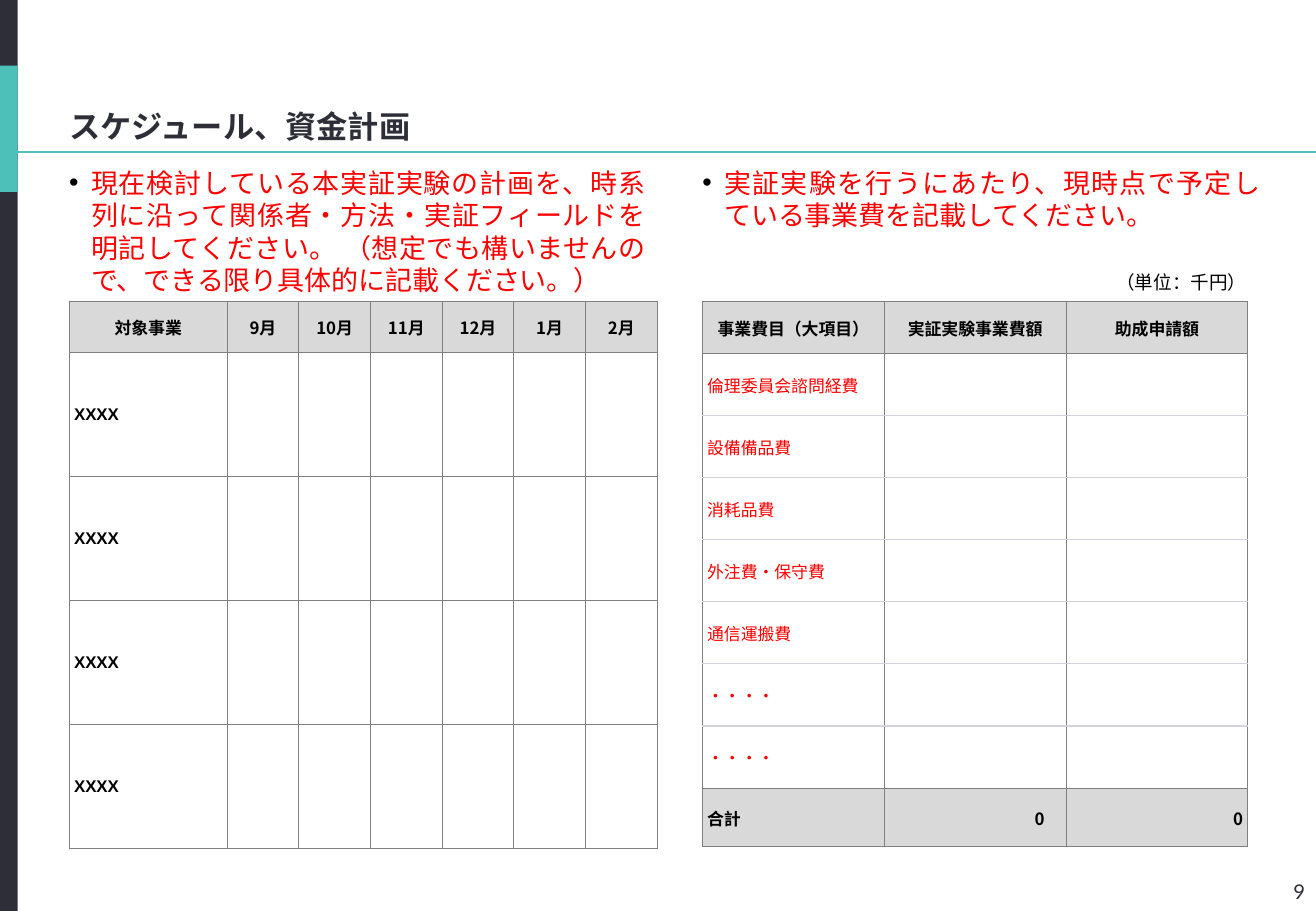
from lxml.etree import SubElement
from pptx import Presentation
from pptx.dml.color import RGBColor
from pptx.enum.shapes import MSO_CONNECTOR, MSO_SHAPE
from pptx.enum.text import MSO_ANCHOR, MSO_AUTO_SIZE, PP_ALIGN
from pptx.oxml.ns import qn
from pptx.util import Inches, Pt

DARK = RGBColor(0x2E, 0x2E, 0x38)
TEAL = RGBColor(0x4E, 0xC0, 0xBA)
RED = RGBColor(0xFF, 0x00, 0x00)
BLACK = RGBColor(0x00, 0x00, 0x00)
GRAY = RGBColor(0x80, 0x80, 0x80)
PALE = RGBColor(0xD2, 0xD2, 0xDA)
SHADE = RGBColor(0xD9, 0xD9, 0xD9)

LATO, ARIAL, NOTO = "Lato", "Arial", "Noto Sans CJK JP"
FIRM, SOFT = (GRAY, 0.5), (PALE, 0.75)
FRAME = dict.fromkeys("LRTB", FIRM)
BARE = dict.fromkeys("LRTB")

HEADING = {"name": NOTO, "size": Pt(10), "bold": True, "color": BLACK}
LABEL = {**HEADING, "name": ARIAL}
ITEM = {**LABEL, "bold": False, "color": RED}
UNIT = {**HEADING, "size": Pt(11), "bold": False}
GUIDE = {"name": NOTO, "size": Pt(16), "bold": False, "color": RED}
TITLE = {"name": LATO, "size": Pt(18.5), "bold": True, "color": DARK}
NUMBER = {"name": LATO, "size": Pt(12), "bold": False, "color": DARK}

# Shares of the slide's width or height, in percent
BAR_WIDTH = 1.35
LEFT, RIGHT = 5.26, 53.37
GUIDE_TOP = 18.27


class PlanSlide:
    def __init__(self, presentation):
        self.width = presentation.slide_width
        self.height = presentation.slide_height
        self.slide = presentation.slides.add_slide(presentation.slide_layouts[3])

    def across(self, share):
        return round(self.width * share / 100)

    def down(self, share):
        return round(self.height * share / 100)

    def box(self, left, top, width, height):
        return self.across(left), self.down(top), self.across(width), self.down(height)

    def bar(self, top, height, color):
        shape = self.slide.shapes.add_shape(
            MSO_SHAPE.RECTANGLE, *self.box(0, top, BAR_WIDTH, height))
        shape.shadow.inherit = False
        shape.fill.solid()
        shape.fill.fore_color.rgb = color
        shape.line.fill.background()

    def rule(self, top):
        y = self.down(top)
        line = self.slide.shapes.add_connector(MSO_CONNECTOR.STRAIGHT, 0, y, self.width, y)
        line.line.color.rgb = TEAL
        line.line.width = Pt(1.5)
        SubElement(line._element.spPr, qn("a:effectLst"))

    def add_words(self, paragraph, text, style, align):
        paragraph.alignment = align
        run = paragraph.add_run()
        run.text = text
        for name, value in style.items():
            if name == "color":
                run.font.color.rgb = value
            else:
                setattr(run.font, name, value)
        SubElement(run.font._element, qn("a:ea"), typeface=NOTO)

    def text(self, shape, place, text, style, align, anchor=MSO_ANCHOR.TOP):
        """Place a text box or placeholder, fill it and return its paragraph."""
        shape.left, shape.top, shape.width, shape.height = self.box(*place)
        frame = shape.text_frame
        settings = {"word_wrap": True, "auto_size": MSO_AUTO_SIZE.NONE,
                    "vertical_anchor": anchor, "margin_left": 0, "margin_right": 0,
                    "margin_top": 0, "margin_bottom": 0}
        for name, value in settings.items():
            setattr(frame, name, value)
        self.add_words(frame.paragraphs[0], text, style, align)
        return frame.paragraphs[0]

    def title(self, text):
        paragraph = self.text(self.slide.shapes.title, (LEFT, 7.2, 89.57, 8.67), text,
                              TITLE, PP_ALIGN.JUSTIFY, MSO_ANCHOR.BOTTOM)
        paragraph.line_spacing = 1.0

    def guide(self, index, place, text):
        """Fill a body placeholder with one bulleted instruction."""
        paragraph = self.text(self.slide.placeholders[index], place, text,
                              GUIDE, PP_ALIGN.JUSTIFY)
        paragraph.line_spacing = Pt(19.2)
        paragraph.space_before = Pt(0)
        paragraph.space_after = Pt(5.6)
        properties = paragraph._p.get_or_add_pPr()
        properties.set("marL", str(Inches(0.18)))
        properties.set("indent", str(-Inches(0.18)))
        color = SubElement(properties, qn("a:buClr"))
        SubElement(color, qn("a:srgbClr"), val=str(BLACK))
        SubElement(properties, qn("a:buFont"), typeface=ARIAL)
        SubElement(properties, qn("a:buChar"), char="•")

    def page_number(self, text):
        shape = self.slide.shapes.add_textbox(0, 0, 0, 0)
        self.text(shape, (95.48, 97.33, 3.69, 1.87), text, NUMBER,
                  PP_ALIGN.RIGHT, MSO_ANCHOR.BOTTOM)

    def table(self, left, top, columns, rows):
        place = self.box(left, top, sum(columns), sum(rows))
        table = self.slide.shapes.add_table(len(rows), len(columns), *place).table
        table.first_row = table.horz_banding = False
        for column, share in zip(table.columns, columns):
            column.width = self.across(share)
        for row, share in zip(table.rows, rows):
            row.height = self.down(share)
        return table

    def cell(self, cell, text, style, align=PP_ALIGN.LEFT, borders=FRAME, fill=None,
             margins=(0.04, 0.04, 0.04, 0.04)):
        """Format one cell; margins run left, top, right, bottom in inches."""
        cell.vertical_anchor = MSO_ANCHOR.MIDDLE
        for side, margin in zip(("left", "top", "right", "bottom"), margins):
            setattr(cell, f"margin_{side}", Inches(margin))
        self.add_words(cell.text_frame.paragraphs[0], text, style, align)
        properties = cell._tc.get_or_add_tcPr()
        for side, border in borders.items():
            line = SubElement(properties, qn(f"a:ln{side}"))
            if border is None:
                SubElement(line, qn("a:noFill"))
                continue
            color, width = border
            line.set("w", str(Pt(width)))
            SubElement(SubElement(line, qn("a:solidFill")), qn("a:srgbClr"), val=str(color))
        if fill is None:
            cell.fill.background()
        else:
            cell.fill.solid()
            cell.fill.fore_color.rgb = fill

    def schedule(self, headings, labels):
        months = len(headings) - 1
        table = self.table(LEFT, 33.07, [12] + [32.69 / months] * months,
                           [5.6] + [54.53 / len(labels)] * len(labels))
        for column, heading in enumerate(headings):
            self.cell(table.cell(0, column), heading, HEADING, PP_ALIGN.CENTER, fill=SHADE)
            for row, label in enumerate(labels, 1):
                self.cell(table.cell(row, column), "" if column else label, LABEL)

    def budget(self, unit, headings, items, totals):
        table = self.table(RIGHT, 28.53, [41.46 / len(headings)] * len(headings),
                           [4.53, 5.73] + [6.82] * len(items) + [6.4])
        tight, indented = (0.01, 0.01, 0.01, 0), (0.04, 0.01, 0.04, 0)
        last = len(items) - 1
        for column, (heading, total) in enumerate(zip(headings, totals)):
            self.cell(table.cell(0, column), "" if column else unit, UNIT, PP_ALIGN.RIGHT,
                      {**BARE, "B": FIRM}, margins=tight)
            self.cell(table.cell(1, column), heading, HEADING, PP_ALIGN.CENTER,
                      fill=SHADE, margins=tight)
            for index, item in enumerate(items):
                borders = {**FRAME, "T": SOFT if index else FIRM,
                           "B": SOFT if index < last else FIRM}
                self.cell(table.cell(index + 2, column), "" if column else item, ITEM,
                          borders=borders, margins=indented)
            self.cell(table.cell(len(items) + 2, column), total, HEADING,
                      PP_ALIGN.RIGHT if column else PP_ALIGN.LEFT,
                      fill=SHADE, margins=indented)
        table.cell(0, 0).merge(table.cell(0, len(headings) - 1))


def main():
    presentation = Presentation()
    presentation.slide_width, presentation.slide_height = Inches(10.83), Inches(7.5)
    plan = PlanSlide(presentation)
    plan.bar(0, 100, DARK)
    plan.bar(7.2, 13.87, TEAL)
    plan.rule(16.67)
    plan.page_number("9")
    plan.title("スケジュール、資金計画")
    plan.guide(1, (LEFT, GUIDE_TOP, 43.86, 16.27),
               "現在検討している本実証実験の計画を、時系列に沿って関係者・方法・実証フィールドを"
               "明記してください。 （想定でも構いませんので、できる限り具体的に記載ください。）")
    plan.guide(2, (RIGHT, GUIDE_TOP, 42.38, 8.53),
               "実証実験を行うにあたり、現時点で予定している事業費を記載してください。")
    plan.schedule(["対象事業", "9月", "10月", "11月", "12月", "1月", "2月"], ["XXXX"] * 4)
    plan.budget("（単位：千円）",
                ["事業費目（大項目）", "実証実験事業費額", "助成申請額"],
                ["倫理委員会諮問経費", "設備備品費", "消耗品費", "外注費・保守費",
                 "通信運搬費", "・・・・", "・・・・"],
                ["合計", "0　", "0"])
    presentation.save("out.pptx")


if __name__ == "__main__":
    main()
